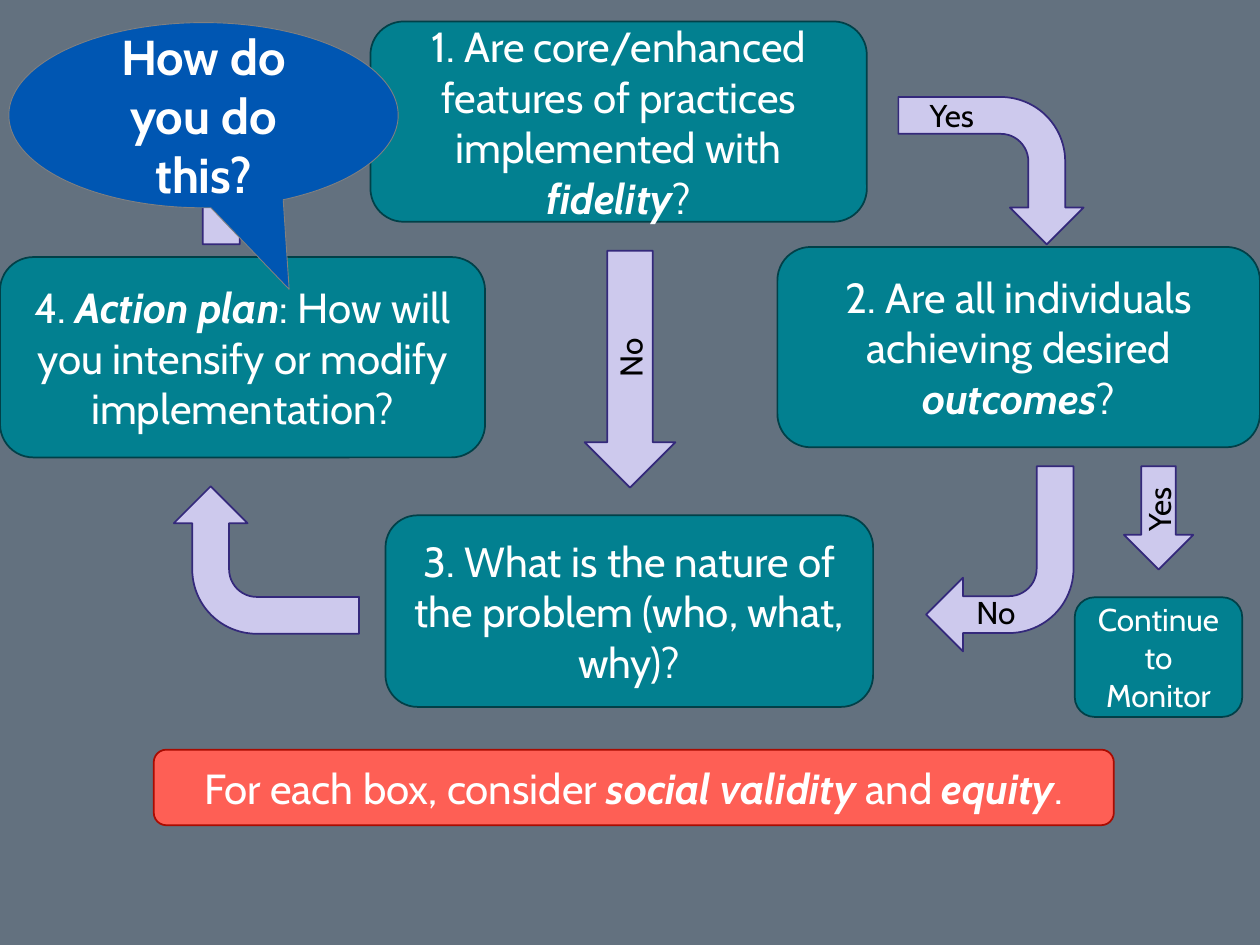
from dataclasses import dataclass
from pptx import Presentation
from pptx.dml.color import RGBColor as RGB
from pptx.enum.shapes import MSO_SHAPE as Geo
from pptx.enum.text import MSO_ANCHOR as Anchor, PP_ALIGN as Align
from pptx.util import Inches, Pt


@dataclass(frozen=True)
class Paint:
    fill: str
    line: str
    text: str
    width: float = 1


@dataclass(frozen=True)
class Theme:
    font: str = "Cabin"
    back: str = "63717F"
    small: int = 18
    body: int = 24
    large: int = 28
    teal: Paint = Paint("028090", "014048", "FFFFFF")
    lilac: Paint = Paint("CDC9ED", "34297B", "000000")
    red: Paint = Paint("FE5F55", "A90B01", "FFFFFF")
    blue: Paint = Paint("0056B2", "808080", "FFFFFF", 0.5)


@dataclass(frozen=True)
class Area:
    x: float
    y: float
    w: float
    h: float

    def emu(self) -> list:
        return [Inches(v) for v in (self.x, self.y, self.w, self.h)]


@dataclass(frozen=True)
class Box:
    area: Area
    text: str  # parts between asterisks are bold italic
    paint: Paint
    size: int


@dataclass(frozen=True)
class Bend:
    area: Area
    turn: int


@dataclass(frozen=True)
class Drop:
    area: Area
    text: str


@dataclass(frozen=True)
class Label:
    area: Area
    text: str


THEME = Theme()

BOXES = [
    Box(Area(2.94, 0.17, 3.94, 1.59),
        "1. Are core/enhanced features of practices implemented with *fidelity*?",
        THEME.teal, THEME.body),
    Box(Area(6.17, 1.96, 3.83, 1.59),
        "2. Are all individuals achieving desired *outcomes*?",
        THEME.teal, THEME.body),
    Box(Area(3.06, 4.09, 3.87, 1.52),
        "3. What is the nature of the problem (who, what, why)?",
        THEME.teal, THEME.body),
    Box(Area(0, 2.04, 3.85, 1.59),
        "4. *Action plan*: How will you intensify or modify implementation?",
        THEME.teal, THEME.body),
    Box(Area(8.53, 4.74, 1.33, 0.95), "Continue to Monitor",
        THEME.teal, THEME.small),
    Box(Area(1.22, 5.95, 7.62, 0.6),
        "For each box, consider *social validity *and *equity*.",
        THEME.red, THEME.body),
]
BENDS = [
    Bend(Area(1.53, 3.71, 1.17, 1.47), 270),
    Bend(Area(1.61, 0.68, 1.17, 1.26), 0),
    Bend(Area(7.28, 0.62, 1.17, 1.47), 90),
    Bend(Area(7.35, 3.7, 1.17, 1.47), 180),
]
DROPS = [
    Drop(Area(4.64, 1.99, 0.72, 1.88), "No"),
    Drop(Area(8.92, 3.7, 0.55, 0.82), "Yes"),
]
LABELS = [
    Label(Area(7.28, 0.71, 0.59, 0.4), "Yes"),
    Label(Area(7.65, 4.66, 0.59, 0.4), "No"),
]
BUBBLE = Box(Area(0.07, 0.18, 3.09, 1.47), "How do you do this?",
             THEME.blue, THEME.large)


def write(shape, text: str, size: int, color: str, align=Align.CENTER) -> None:
    frame = shape.text_frame
    frame.word_wrap = True
    para = frame.paragraphs[0]
    para.alignment = align
    para.font.name = THEME.font
    para.font.size = Pt(size)
    para.font.color.rgb = RGB.from_string(color)
    for i, part in enumerate(text.split("*")):
        run = para.add_run()
        run.text = part
        if i % 2:
            run.font.bold = run.font.italic = True


def draw(slide, geo: Geo, area: Area, paint: Paint):
    shape = slide.shapes.add_shape(geo, *area.emu())
    shape.shadow.inherit = False
    shape.fill.solid()
    shape.fill.fore_color.rgb = RGB.from_string(paint.fill)
    shape.line.color.rgb = RGB.from_string(paint.line)
    shape.line.width = Pt(paint.width)
    shape.text_frame.vertical_anchor = Anchor.MIDDLE
    return shape


def add_box(slide, box: Box, geo: Geo = Geo.ROUNDED_RECTANGLE):
    shape = draw(slide, geo, box.area, box.paint)
    write(shape, box.text, box.size, box.paint.text)
    return shape


def add_bend(slide, bend: Bend) -> None:
    draw(slide, Geo.BENT_ARROW, bend.area, THEME.lilac).rotation = bend.turn


def add_drop(slide, drop: Drop) -> None:
    shape = draw(slide, Geo.DOWN_ARROW, drop.area, THEME.lilac)
    write(shape, drop.text, THEME.small, THEME.lilac.text)
    # Text reads upwards along the arrow
    shape.text_frame._txBody.bodyPr.set("vert", "vert270")


def add_label(slide, label: Label) -> None:
    shape = slide.shapes.add_textbox(*label.area.emu())
    write(shape, label.text, THEME.small, THEME.lilac.text, Align.LEFT)


def add_bubble(slide, box: Box) -> None:
    shape = add_box(slide, box, Geo.OVAL_CALLOUT)
    shape.text_frame.paragraphs[0].font.bold = True
    # Tail tip, relative to the centre
    shape.adjustments[0] = 0.22
    shape.adjustments[1] = 0.94


def main() -> None:
    deck = Presentation()
    deck.slide_width, deck.slide_height = Inches(10), Inches(7.5)
    slide = deck.slides.add_slide(deck.slide_layouts[6])
    slide.background.fill.solid()
    slide.background.fill.fore_color.rgb = RGB.from_string(THEME.back)

    # Flow chart, with the callout on top
    for items, add in ((BOXES, add_box), (BENDS, add_bend),
                       (DROPS, add_drop), (LABELS, add_label)):
        for item in items:
            add(slide, item)
    add_bubble(slide, BUBBLE)

    deck.save("out.pptx")


if __name__ == "__main__":
    main()
